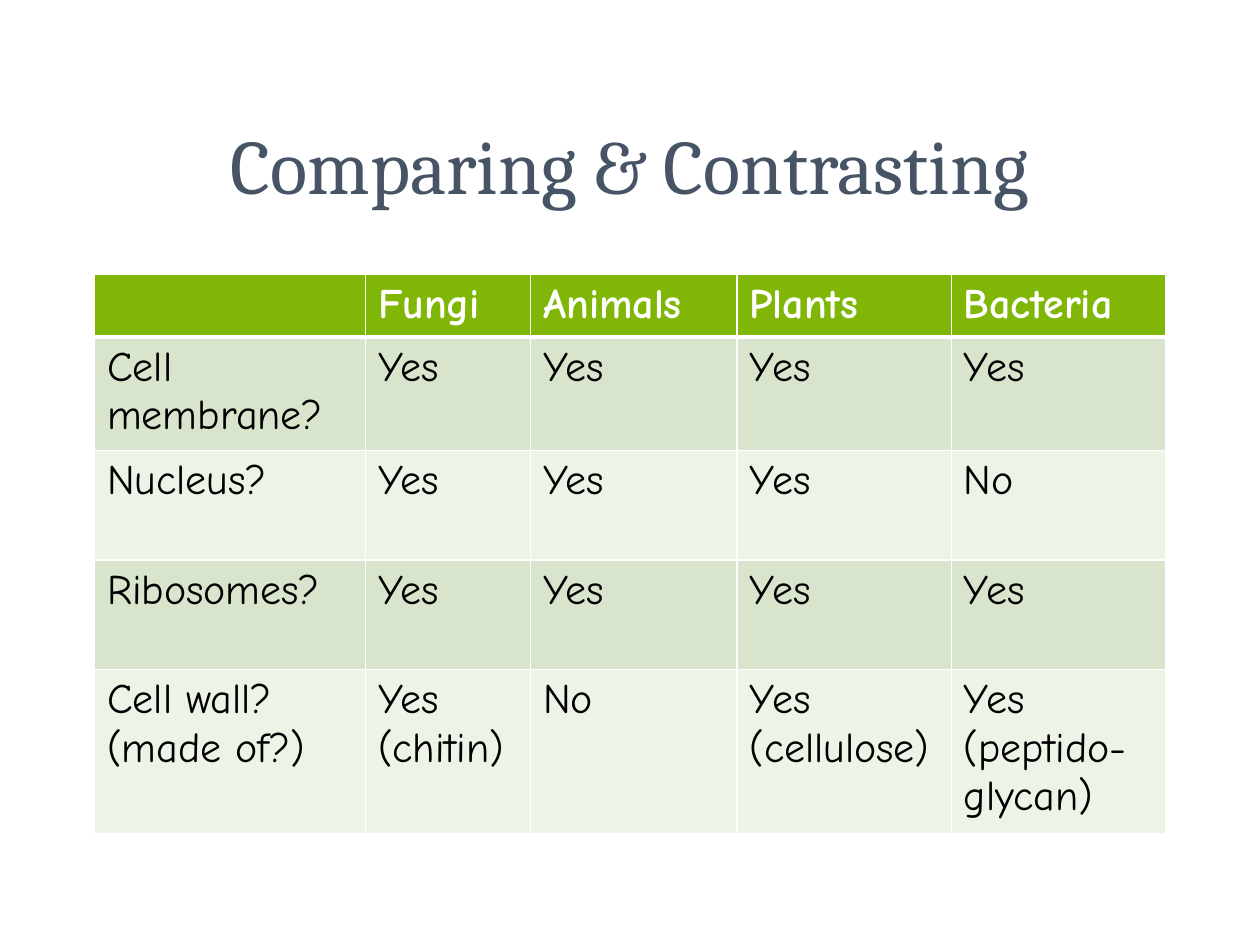
from typing import NamedTuple

from lxml.etree import SubElement
from pptx import Presentation
from pptx.dml.color import RGBColor
from pptx.enum.text import MSO_ANCHOR as Anchor, PP_ALIGN as Align
from pptx.oxml.ns import qn
from pptx.util import Inches, Pt

SLATE = RGBColor(0x46, 0x54, 0x66)
GREEN = RGBColor(0x80, 0xB6, 0x06)
SAGE = RGBColor(0xD8, 0xE5, 0xCC)
MIST = RGBColor(0xED, 0xF3, 0xE7)
WHITE = RGBColor(0xFF, 0xFF, 0xFF)
BLACK = RGBColor(0x00, 0x00, 0x00)

SLIDE_W, SLIDE_H = Inches(10), Inches(7.5)
MARGIN = 0.075  # share of the slide's width
COLUMN_WIDTHS = (2.15, 1.31, 1.64, 1.7, 1.7)
THIN, THICK = 1, 3


class Trait(NamedTuple):
    question: str
    fungi: str
    animals: str
    plants: str
    bacteria: str
    height: float


HEADER = Trait("", "Fungi", "Animals", "Plants", "Bacteria", 0.47)
TRAITS = (
    Trait("Cell membrane?", "Yes", "Yes", "Yes", "Yes", 0.87),
    Trait("Nucleus?", "Yes", "Yes", "Yes", "No", 0.87),
    Trait("Ribosomes?", "Yes", "Yes", "Yes", "Yes", 0.87),
    Trait("Cell wall?\n(made of?)", "Yes\n(chitin)", "No",
          "Yes\n(cellulose)", "Yes\n(peptido-glycan)", 1.25),
)


class TextStyle(NamedTuple):
    font: str
    size: int
    color: RGBColor
    bold: bool = False
    align: Align = Align.LEFT


TITLE = TextStyle("Cambria", 44, SLATE, align=Align.CENTER)
HEADING = TextStyle("Comic Neue", 24, WHITE, bold=True)
ANSWER = TextStyle("Comic Neue", 24, BLACK)


def write(frame, text: str, style: TextStyle) -> None:
    """Fill a text frame with one paragraph for each line of text."""
    for index, line in enumerate(text.splitlines()):
        paragraph = frame.add_paragraph() if index else frame.paragraphs[0]
        paragraph.alignment = style.align
        run = paragraph.add_run()
        run.text = line
        run.font.name = style.font
        run.font.size = Pt(style.size)
        run.font.bold = style.bold
        run.font.color.rgb = style.color


def add_borders(cell, top: int, bottom: int) -> None:
    properties = cell._tc.get_or_add_tcPr()
    for side, width in (("L", THIN), ("R", THIN), ("T", top), ("B", bottom)):
        line = SubElement(properties, qn(f"a:ln{side}"), w=str(Pt(width)))
        fill = SubElement(line, qn("a:solidFill"))
        SubElement(fill, qn("a:srgbClr"), val=str(WHITE))


def add_title(slide, text: str) -> None:
    box = slide.shapes.add_textbox(
        int(SLIDE_W * MARGIN), int(SLIDE_H * 0.09),
        int(SLIDE_W * (1 - 2 * MARGIN)), Inches(1.25))
    frame = box.text_frame
    frame.word_wrap = True
    frame.vertical_anchor = Anchor.MIDDLE
    write(frame, text, TITLE)


def add_trait_table(slide) -> None:
    traits = (HEADER, *TRAITS)
    table = slide.shapes.add_table(
        len(traits), len(COLUMN_WIDTHS),
        int(SLIDE_W * MARGIN), int(SLIDE_H * 0.29),
        Inches(sum(COLUMN_WIDTHS)),
        Inches(sum(trait.height for trait in traits))).table
    for column, width in zip(table.columns, COLUMN_WIDTHS):
        column.width = Inches(width)

    for number, (row, trait) in enumerate(zip(table.rows, traits)):
        row.height = Inches(trait.height)
        is_header = number == 0
        background = GREEN if is_header else SAGE if number % 2 else MIST
        for cell, text in zip(row.cells, trait[:-1]):
            add_borders(cell, top=THICK if number == 1 else THIN,
                        bottom=THICK if is_header else THIN)
            cell.fill.solid()
            cell.fill.fore_color.rgb = background
            write(cell.text_frame, text, HEADING if is_header else ANSWER)


def main() -> None:
    deck = Presentation()
    deck.slide_width, deck.slide_height = SLIDE_W, SLIDE_H
    slide = deck.slides.add_slide(deck.slide_layouts[6])
    add_title(slide, "Comparing & Contrasting")
    add_trait_table(slide)
    deck.save("out.pptx")


if __name__ == "__main__":
    main()
